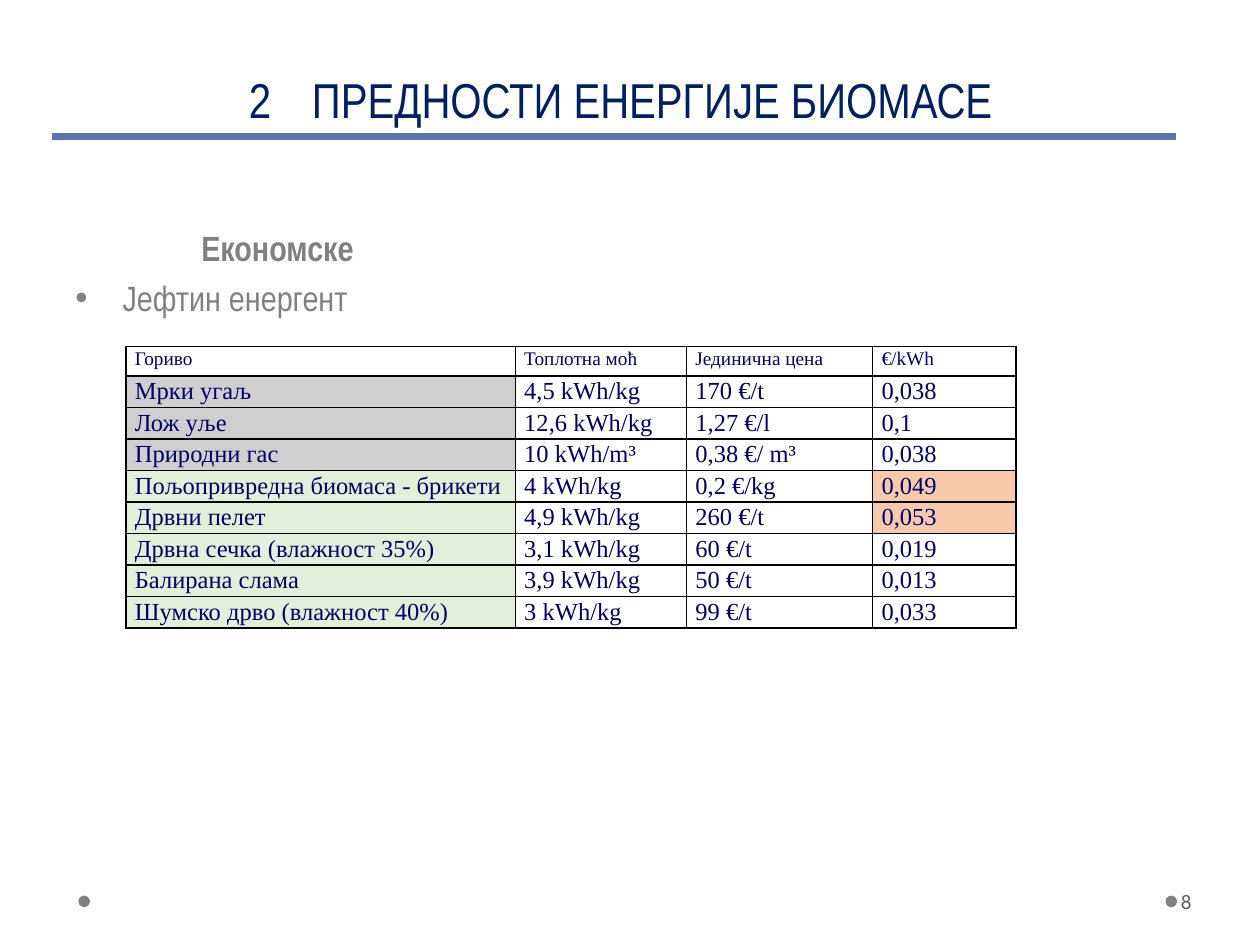
import pptx
import pptx.util
import pptx.dml.color
import pptx.enum.shapes
import pptx.enum.text
import pptx.oxml
import pptx.oxml.ns

Pt = pptx.util.Pt
Align = pptx.enum.text.PP_ALIGN
Anchor = pptx.enum.text.MSO_ANCHOR

# Content
COLORS = {
    "title": "002060", "body": "808080", "rule": "5C72B2", "number": "595959",
    "table": "000066", "border": "000000",
    "fossil": "D0CECE", "biomass": "E2EFD9", "costly": "F7CAAC",
}
TITLE = "2\tПРЕДНОСТИ ЕНЕРГИЈЕ БИОМАСЕ"
HEADING = "Економске"
POINT = "Јефтин енергент"
PAGE_NUMBER = "8"
HEADER = ("Гориво", "Топлотна моћ", "Јединична цена", "€/kWh")
FUELS = {
    "fossil": [
        ("Мрки угаљ", "4,5 kWh/kg", "170 €/t", "0,038"),
        ("Лож уље", "12,6 kWh/kg", "1,27 €/l", "0,1"),
        ("Природни гас", "10 kWh/m³", "0,38 €/ m³", "0,038"),
    ],
    "biomass": [
        ("Пољопривредна биомаса - брикети", "4 kWh/kg", "0,2 €/kg", "0,049"),
        ("Дрвни пелет", "4,9 kWh/kg", "260 €/t", "0,053"),
        ("Дрвна сечка (влажност 35%)", "3,1 kWh/kg", "60 €/t", "0,019"),
        ("Балирана слама", "3,9 kWh/kg", "50 €/t", "0,013"),
        ("Шумско дрво (влажност 40%)", "3 kWh/kg", "99 €/t", "0,033"),
    ],
}
COSTLY_PRICES = ("0,049", "0,053")
COLUMN_WIDTHS = (222.5, 97.8, 106.4, 82)
ROW_HEIGHT = 16.8


def rgb(name):
    return pptx.dml.color.RGBColor.from_string(COLORS[name])


def add_xml(parent, xml):
    element = pptx.oxml.parse_xml(
        xml.replace(">", f" {pptx.oxml.ns.nsdecls('a')}>", 1)
        if not xml.endswith("/>") or xml.count("<") > 1
        else xml.replace("/>", f" {pptx.oxml.ns.nsdecls('a')}/>"))
    parent.append(element)


def add_span(para, text, size, font, color, bold=False):
    span = para.add_run()
    span.text = text
    span.font.size = Pt(size)
    span.font.name = font
    span.font.bold = bold
    span.font.color.rgb = rgb(color)


def add_box(page, left, top, width, height, anchor):
    box = page.shapes.add_textbox(Pt(left), Pt(top), Pt(width), Pt(height))
    box.text_frame.word_wrap = True
    box.text_frame.vertical_anchor = anchor
    return box.text_frame


def fill_cell(cell, text, size, fill):
    cell.margin_left = cell.margin_right = Pt(5.1)
    cell.margin_top = cell.margin_bottom = 0
    para = cell.text_frame.paragraphs[0]
    para.alignment = Align.JUSTIFY
    para.line_spacing = 1.07
    add_span(para, text, size, "Times New Roman", "table")
    properties = cell._tc.get_or_add_tcPr()
    for side in ("lnL", "lnR", "lnT", "lnB"):
        add_xml(properties, f'<a:{side} w="12700"><a:solidFill><a:srgbClr val="{COLORS["border"]}"/>'
                            f'</a:solidFill></a:{side}>')
    if fill:
        cell.fill.solid()
        cell.fill.fore_color.rgb = rgb(fill)
    else:
        cell.fill.background()


deck = pptx.Presentation()
deck.slide_width, deck.slide_height = Pt(720), Pt(540)
page = deck.slides.add_slide(deck.slide_layouts[6])

# Footer dots
for left in (666, 44.8):
    dot = page.shapes.add_shape(pptx.enum.shapes.MSO_SHAPE.OVAL, Pt(left), Pt(511.8), Pt(6.6), Pt(6.6))
    dot.shadow.inherit = False
    dot.fill.solid()
    dot.fill.fore_color.rgb = rgb("body")
    dot.line.fill.background()

# Title and the rule below it
para = add_box(page, 25.2, 0, 658.8, 77, Anchor.BOTTOM).paragraphs[0]
para.alignment = Align.CENTER
para.line_spacing = Pt(36)
add_xml(para._p.get_or_add_pPr(), '<a:tabLst><a:tab pos="91440" algn="l"/></a:tabLst>')
add_span(para, TITLE, 28, "Arial Narrow", "title")

rule = page.shapes.add_connector(
    pptx.enum.shapes.MSO_CONNECTOR.STRAIGHT, Pt(30), Pt(78), Pt(672), Pt(78))
rule.line.color.rgb = rgb("rule")
rule.line.width = Pt(4.5)
add_xml(rule._element.spPr, "<a:effectLst/>")

# Heading and bullet point
body = add_box(page, 36, 126, 648, 356.4, Anchor.TOP)
heading, point = body.paragraphs[0], body.add_paragraph()
heading.space_before = point.space_before = Pt(4.6)
add_span(heading, "\t\t", 20, "Arial Narrow", "body")
add_span(heading, HEADING, 20, "Arial Narrow", "body", bold=True)
properties = point._p.get_or_add_pPr()
properties.set("marL", str(Pt(27)))
properties.set("indent", str(-Pt(27)))
add_xml(properties, '<a:buFont typeface="Arial"/>')
add_xml(properties, '<a:buChar char="•"/>')
add_span(point, POINT, 20, "Arial Narrow", "body")

# Fuel price table
rows = [(None, HEADER)] + [(group, fuel) for group, fuels in FUELS.items() for fuel in fuels]
table = page.shapes.add_table(
    len(rows), len(HEADER), Pt(72), Pt(198), Pt(sum(COLUMN_WIDTHS)), Pt(ROW_HEIGHT * len(rows))).table
table.first_row = table.horz_banding = False
for column, width in zip(table.columns, COLUMN_WIDTHS):
    column.width = Pt(width)
for r, (group, values) in enumerate(rows):
    table.rows[r].height = Pt(ROW_HEIGHT)
    for c, value in enumerate(values):
        fill = group if c == 0 else "costly" if value in COSTLY_PRICES else None
        fill_cell(table.cell(r, c), value, 14 if group else 11, fill)

# Page number
number = add_box(page, 672.5, 500.4, 43.9, 28.8, Anchor.MIDDLE)
number.margin_left = Pt(2.2)
number.margin_right = Pt(3.6)
add_span(number.paragraphs[0], PAGE_NUMBER, 12, "League Spartan", "number")

deck.save("out.pptx")
